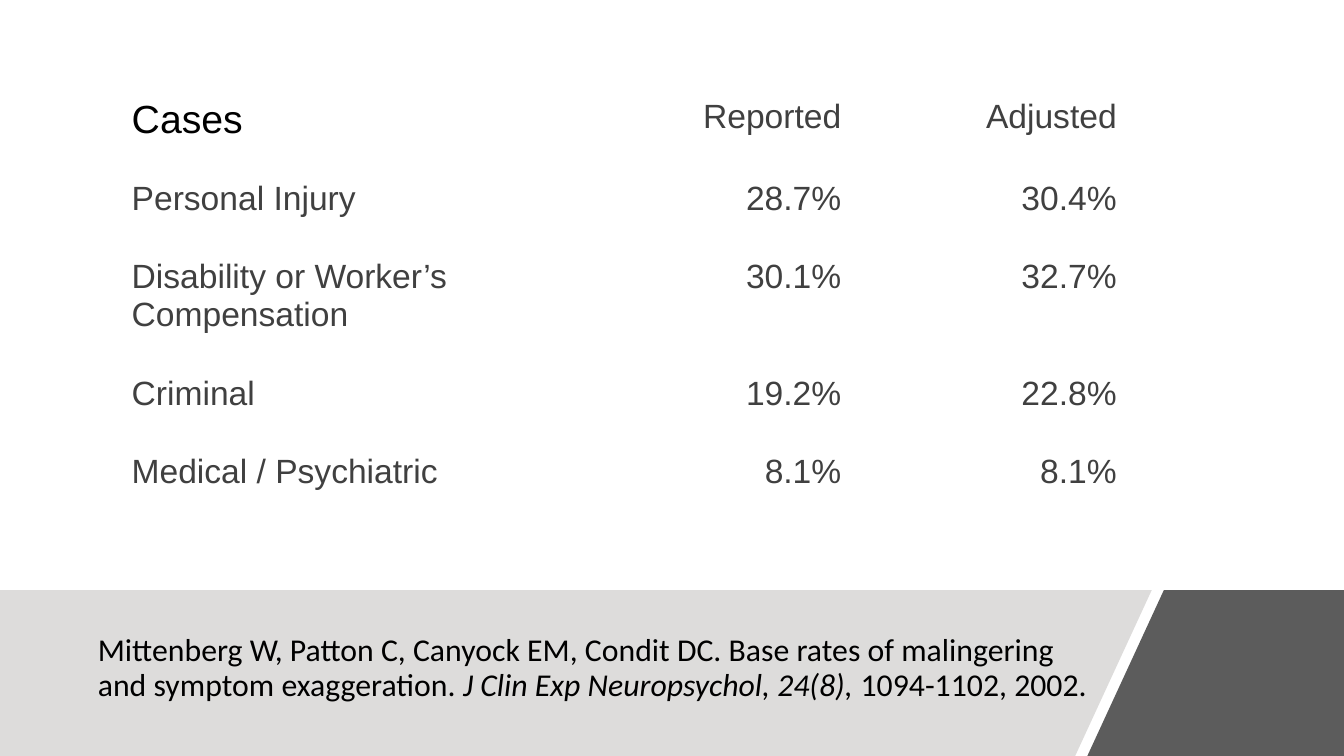
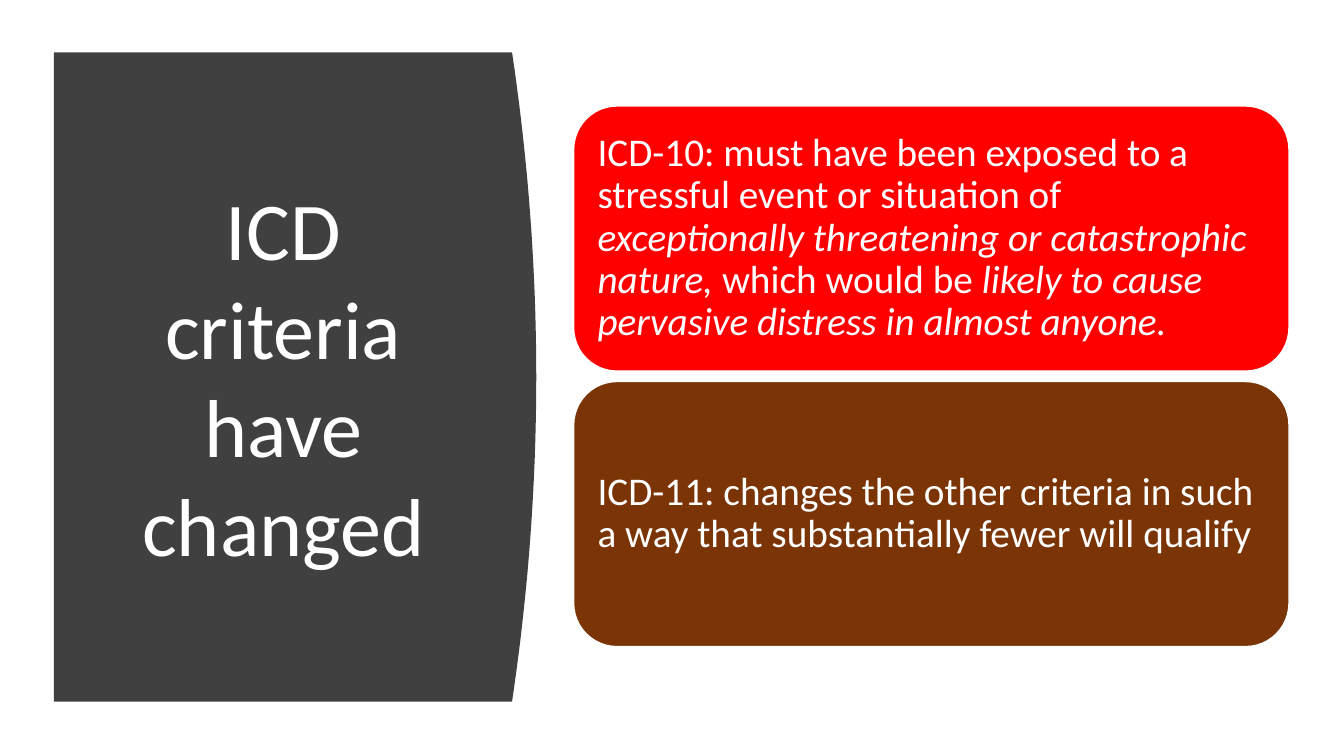
from lxml import etree
from pptx import Presentation
from pptx.dml.color import RGBColor
from pptx.enum.shapes import MSO_SHAPE
from pptx.enum.text import MSO_ANCHOR, PP_ALIGN
from pptx.oxml.ns import qn
from pptx.util import Inches, Pt

ROUNDED = MSO_SHAPE.ROUNDED_RECTANGLE
TOP, MIDDLE, BOTTOM = MSO_ANCHOR.TOP, MSO_ANCHOR.MIDDLE, MSO_ANCHOR.BOTTOM
LEFT, CENTER, RIGHT = PP_ALIGN.LEFT, PP_ALIGN.CENTER, PP_ALIGN.RIGHT

COLORS = {
    "white": "FFFFFF",
    "black": "000000",
    "dark": "404040",
    "band": "DDDCDB",
    "red": "FF0000",
    "brown": "7A3405",
}
TITLE_FONT, TABLE_FONT = "Calibri", "Arial"
PAGE_WIDTH = 10
PAGE_HEIGHT = PAGE_WIDTH * 9 / 16

CASE_ROWS = [
    ("Cases", "Reported", "Adjusted"),
    ("Personal Injury", "28.7%", "30.4%"),
    ("Disability or Worker’s Compensation", "30.1%", "32.7%"),
    ("Criminal", "19.2%", "22.8%"),
    ("Medical / Psychiatric", "8.1%", "8.1%"),
]
CITATION = [
    ("Mittenberg W, Patton C, Canyock EM, Condit DC. Base rates of malingering "
     "and symptom exaggeration. ", False),
    ("J Clin Exp Neuropsychol, 24(8), ", True),
    ("1094-1102, 2002.", False),
]
CRITERIA = [
    ("red", [
        ("ICD-10: must have been exposed to a stressful event or situation of ", False),
        ("exceptionally threatening or catastrophic nature, ", True),
        ("which would be ", False),
        ("likely to cause pervasive distress in almost anyone.", True),
    ]),
    ("brown", [
        ("ICD-11: changes the other criteria in such a way that substantially "
         "fewer will qualify", False),
    ]),
]


def rgb(name):
    """Return the named palette colour."""
    return RGBColor.from_string(COLORS[name])


def write_text(frame, spans, size, color, font=TITLE_FONT, align=LEFT, spacing=None):
    """Fill a text frame with one paragraph of (text, italic) spans."""
    frame.word_wrap = True
    para = frame.paragraphs[0]
    para.alignment = align
    para.line_spacing = spacing
    para.font.name, para.font.size = font, Pt(size)
    para.font.color.rgb = rgb(color)
    for text, italic in spans:
        span = para.add_run()
        span.text = text
        if italic:
            span.font.italic = True


def add_title(page, box, spans, size, color, anchor, align=LEFT, spacing=None):
    """Add a slide title in a text box."""
    frame = page.shapes.add_textbox(*map(Inches, box)).text_frame
    frame.vertical_anchor = anchor
    write_text(frame, spans, size, color, align=align, spacing=spacing)


def add_outline(page, points, color):
    """Draw a closed, filled outline through points given in inches."""
    corners = [(Inches(x), Inches(y)) for x, y in points]
    builder = page.shapes.build_freeform(*corners[0])
    builder.add_line_segments(corners[1:])
    shape = builder.convert_to_shape()
    shape.shadow.inherit = False
    shape.fill.solid()
    shape.fill.fore_color.rgb = rgb(color)
    shape.line.fill.background()
    return shape


def set_opacity(shape, percent):
    """Make the solid fill of a shape partly transparent."""
    color = shape.element.spPr.find(qn("a:solidFill"))[0]
    etree.SubElement(color, qn("a:alpha"), val=str(percent * 1000))


def add_citation_band(page, box):
    """Draw the slanted bottom band with its dark corner and the citation."""
    left, top, width, height = box
    right, bottom = left + width, top + height
    slant, gap, band_width = 0.57, 0.09, 8.57
    edge = left + band_width
    add_outline(page, [(left, top), (edge, top), (edge - slant, bottom), (left, bottom)], "band")
    corner = add_outline(
        page,
        [(edge + gap, top), (right, top), (right, bottom), (edge + gap - slant, bottom)],
        "dark",
    )
    set_opacity(corner, 85)
    add_title(page, (left + 0.63, top + 0.21, 7.7, 0.68), CITATION, 17, "black", BOTTOM, spacing=0.9)


def add_case_table(page, box):
    """Add the plain table of base rates."""
    frame = page.shapes.add_table(len(CASE_ROWS), len(CASE_ROWS[0]), *map(Inches, box))
    table = frame.table
    table.first_row = table.horz_banding = False
    for column, width in zip(table.columns, (3.77, 2.12, 2.05)):
        column.width = Inches(width)
    for row, height in zip(table.rows, (0.61, 0.58, 0.87, 0.58, 0.58)):
        row.height = Inches(height)
    for row_index, values in enumerate(CASE_ROWS):
        for column_index, value in enumerate(values):
            cell = table.cell(row_index, column_index)
            cell.fill.background()
            cell.vertical_anchor = TOP
            cell.margin_left, cell.margin_right = Inches(0.35), Inches(0.26)
            cell.margin_top = cell.margin_bottom = Inches(0.13)
            heading = row_index == column_index == 0
            size, color = (21, "black") if heading else (18, "dark")
            align = RIGHT if column_index else LEFT
            write_text(cell.text_frame, [(value, False)], size, color, TABLE_FONT, align)


def add_curved_panel(page, box):
    """Draw the dark panel with a bulging right side and the title on it."""
    left, top, width, height = box
    bulge, steps = 0.18, 40
    curve = []
    for step in range(steps + 1):
        share = step / steps
        inset = bulge * (2 * share - 1) ** 2
        curve.append((left + width - inset, top + height * share))
    add_outline(page, [(left, top), *curve, (left, top + height)], "dark")
    add_title(page, (left + 0.31, top + 0.44, 2.8, 3.93),
              [("ICD criteria have changed", False)], 44, "white", MIDDLE, CENTER)


def add_criteria_cards(page, box):
    """Stack one rounded card for each set of criteria."""
    left, top, width, height = box
    gap = 0.06
    card_height = (height - gap * (len(CRITERIA) - 1)) / len(CRITERIA)
    for index, (color, spans) in enumerate(CRITERIA):
        card_top = top + index * (card_height + gap)
        card = page.shapes.add_shape(
            ROUNDED, *map(Inches, (left, card_top, width, card_height)))
        card.shadow.inherit = False
        card.fill.solid()
        card.fill.fore_color.rgb = rgb(color)
        card.line.color.rgb = rgb("white")
        card.line.width = Pt(2)
        frame = card.text_frame
        frame.vertical_anchor = MIDDLE
        frame.margin_left = frame.margin_right = Inches(0.09)
        frame.margin_top = frame.margin_bottom = Inches(0.09)
        write_text(frame, spans, 21, "white", spacing=0.9)


def add_page(deck):
    """Add a blank white slide."""
    page = deck.slides.add_slide(deck.slide_layouts[6])
    page.background.fill.solid()
    page.background.fill.fore_color.rgb = rgb("white")
    return page


def main():
    """Build and save the two slides."""
    deck = Presentation()
    deck.slide_width, deck.slide_height = Inches(PAGE_WIDTH), Inches(PAGE_HEIGHT)

    rates_page = add_page(deck)
    add_citation_band(rates_page, (0, 4.39, PAGE_WIDTH, PAGE_HEIGHT - 4.39))
    add_case_table(rates_page, (0.63, 0.6, 7.94, 3.21))

    criteria_page = add_page(deck)
    add_curved_panel(criteria_page, (0.4, 0.39, 3.59, 4.83))
    add_criteria_cards(criteria_page, (4.26, 0.78, 5.34, 4.04))

    deck.save("out.pptx")


if __name__ == "__main__":
    main()
